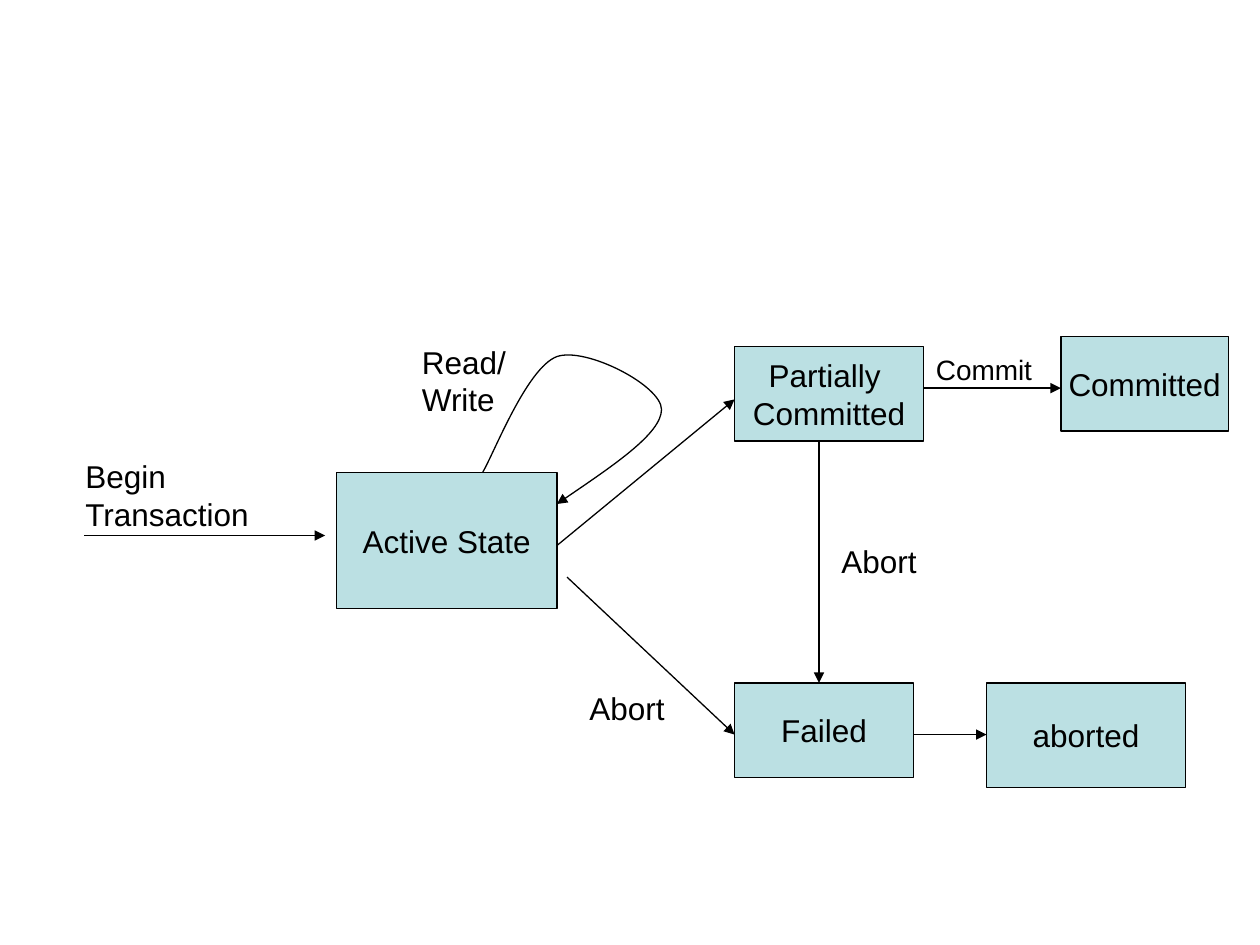
"""Builds a slide with the state diagram of a database transaction."""
import dataclasses

import pptx
import pptx.dml.color
import pptx.enum.shapes
import pptx.enum.text
import pptx.oxml
import pptx.oxml.ns
import pptx.util

Inches = pptx.util.Inches
qn = pptx.oxml.ns.qn


@dataclasses.dataclass(frozen=True)
class Theme:
    font: str = "Arial"
    ink: str = "000000"
    state_fill: str = "BBE0E3"
    body_size: float = 18
    small_size: float = 16
    line_width: float = 0.75


def rgb(value):
    return pptx.dml.color.RGBColor.from_string(value)


def write(frame, text, *, theme, size, align, wrap, anchor):
    frame.word_wrap = wrap
    frame.vertical_anchor = anchor
    for index, line in enumerate(text.split("\n")):
        para = frame.paragraphs[0] if index == 0 else frame.add_paragraph()
        para.alignment = align
        span = para.add_run()
        span.text = line
        span.font.name = theme.font
        span.font.size = pptx.util.Pt(size)
        span.font.color.rgb = rgb(theme.ink)


class Diagram:
    def __init__(self, page, theme):
        self.page = page
        self.theme = theme

    def outline(self, shape, arrow_end=None):
        shape.line.color.rgb = rgb(self.theme.ink)
        shape.line.width = pptx.util.Pt(self.theme.line_width)
        if arrow_end:
            line = shape.element.spPr.find(qn("a:ln"))
            pptx.oxml.ns  # namespace helpers
            end = line.makeelement(qn(f"a:{arrow_end}"), {"type": "triangle"})
            line.append(end)

    def state(self, text, left, top, width, height):
        box = self.page.shapes.add_shape(
            pptx.enum.shapes.MSO_SHAPE.RECTANGLE,
            Inches(left), Inches(top), Inches(width), Inches(height))
        box.shadow.inherit = False
        box.fill.solid()
        box.fill.fore_color.rgb = rgb(self.theme.state_fill)
        self.outline(box)
        write(box.text_frame, text, theme=self.theme, size=self.theme.body_size,
              align=pptx.enum.text.PP_ALIGN.CENTER, wrap=False,
              anchor=pptx.enum.text.MSO_ANCHOR.MIDDLE)

    def label(self, text, left, top, width, height, size=None):
        box = self.page.shapes.add_textbox(
            Inches(left), Inches(top), Inches(width), Inches(height))
        write(box.text_frame, text, theme=self.theme,
              size=size or self.theme.body_size,
              align=pptx.enum.text.PP_ALIGN.LEFT, wrap=True,
              anchor=pptx.enum.text.MSO_ANCHOR.TOP)
        box.text_frame.auto_size = pptx.enum.text.MSO_AUTO_SIZE.SHAPE_TO_FIT_TEXT

    def arrow(self, start, end):
        connector = self.page.shapes.add_connector(
            pptx.enum.shapes.MSO_CONNECTOR.STRAIGHT,
            *(Inches(value) for value in (*start, *end)))
        self.outline(connector, "tailEnd")
        properties = connector.element.spPr
        properties.append(properties.makeelement(qn("a:effectLst"), {}))

    def loop(self, start, controls):
        """Draws cubic curves through the controls, with an arrowhead at the start."""
        builder = self.page.shapes.build_freeform(*(Inches(value) for value in start))
        builder.add_line_segments(
            [(Inches(x), Inches(y)) for x, y in controls], close=False)
        curve = builder.convert_to_shape()
        curve.shadow.inherit = False
        curve.fill.background()
        self.outline(curve, "headEnd")
        segments = list(curve.element.iter(qn("a:lnTo")))
        for first in range(0, len(segments), 3):
            group = segments[first:first + 3]
            bezier = group[0].makeelement(qn("a:cubicBezTo"), {})
            group[0].addprevious(bezier)
            for segment in group:
                bezier.append(segment[0])
                segment.getparent().remove(segment)


def main():
    deck = pptx.Presentation()
    deck.slide_width, deck.slide_height = Inches(10), Inches(7.5)
    theme = Theme()
    diagram = Diagram(deck.slides.add_slide(deck.slide_layouts[6]), theme)

    for state in (
        ("Active State", 2.67, 3.75, 1.75, 1.08),
        ("Partially \nCommitted", 5.83, 2.75, 1.5, 0.75),
        ("Committed", 8.42, 2.67, 1.33, 0.75),
        ("Failed", 5.83, 5.42, 1.42, 0.75),
        ("aborted", 7.83, 5.42, 1.58, 0.83),
    ):
        diagram.state(*state)

    for start, end in (
        ((0.67, 4.25), (2.58, 4.25)),
        ((4.42, 4.33), (5.83, 3.17)),
        ((7.33, 3.08), (8.42, 3.08)),
        ((4.5, 4.58), (5.83, 5.83)),
        ((7.25, 5.83), (7.83, 5.83)),
        ((6.5, 3.5), (6.5, 5.42)),
    ):
        diagram.arrow(start, end)

    diagram.loop((4.42, 4), [
        (4.83, 3.72), (5.25, 3.44), (5.25, 3.25),
        (5.25, 3.06), (4.65, 2.75), (4.42, 2.83),
        (4.18, 2.92), (3.92, 3.6), (3.83, 3.75),
    ])

    for label in (
        ("Begin Transaction", 0.58, 3.58, 1.67, 0.7),
        ("Read/Write", 3.25, 2.67, 0.92, 0.7),
        ("Abort", 4.58, 5.42, 0.92, 0.4),
        ("Abort", 6.58, 4.25, 1, 0.4),
        ("Commit", 7.33, 2.75, 1, 0.37, theme.small_size),
    ):
        diagram.label(*label)

    deck.save("out.pptx")


if __name__ == "__main__":
    main()
